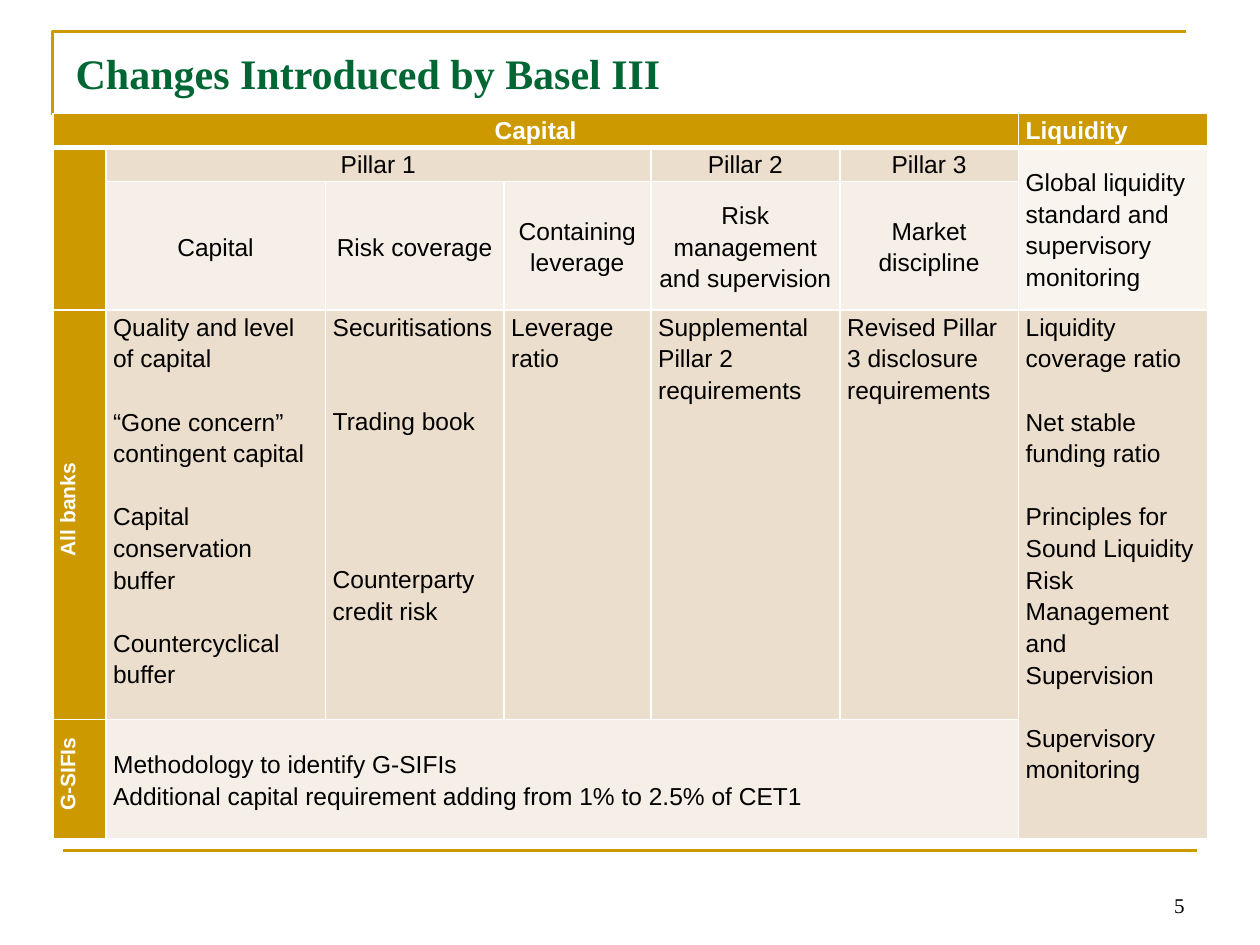
from lxml import etree
from pptx import Presentation
from pptx.dml.color import RGBColor
from pptx.enum.shapes import MSO_CONNECTOR
from pptx.enum.text import MSO_ANCHOR, PP_ALIGN
from pptx.oxml.ns import qn
from pptx.util import Pt

GOLD = RGBColor(0xCC, 0x99, 0x00)
GREEN = RGBColor(0x00, 0x66, 0x33)
SAND = RGBColor(0xEC, 0xDE, 0xCC)
CREAM = RGBColor(0xF6, 0xEF, 0xE7)
IVORY = RGBColor(0xF9, 0xF4, 0xEE)
WHITE = RGBColor(0xFF, 0xFF, 0xFF)
BLACK = RGBColor(0x00, 0x00, 0x00)
SANS, SERIF = "Arial", "Times New Roman"
LEFT, CENTER, RIGHT = PP_ALIGN.LEFT, PP_ALIGN.CENTER, PP_ALIGN.RIGHT
TOP, MIDDLE, BOTTOM = MSO_ANCHOR.TOP, MSO_ANCHOR.MIDDLE, MSO_ANCHOR.BOTTOM
STRAIGHT = MSO_CONNECTOR.STRAIGHT

TITLE_ONLY = 5
LINE_GAP = 18  # height of one table line, the unit of paragraph gaps
COLUMN_WIDTHS = (30.25, 125.5, 102, 84, 108, 102, 108.25)
ROW_HEIGHTS = (19.4, 19.4, 73.5, 234, 68.4)

PILLARS = ((1, 3, "Pillar 1"), (4, 4, "Pillar 2"), (5, 5, "Pillar 3"))
THEMES = ("Capital", "Risk coverage", "Containing leverage",
          "Risk management and supervision", "Market discipline")
# Each measure has its text and the number of lines left free above it.
ALL_BANKS = (
    (("Quality and level of capital", 0),
     ("“Gone concern” contingent capital", 1),
     ("Capital conservation buffer", 1),
     ("Countercyclical buffer", 1)),
    (("Securitisations", 0), ("Trading book", 2),
     ("Counterparty credit risk", 4)),
    (("Leverage ratio", 0),),
    (("Supplemental Pillar 2 requirements", 0),),
    (("Revised Pillar 3 disclosure requirements", 0),),
)
LIQUIDITY = (
    ("Liquidity coverage ratio", 0),
    ("Net stable funding ratio", 1),
    ("Principles for Sound Liquidity Risk Management and Supervision", 1),
    ("Supervisory monitoring", 1),
)
GSIFIS = (("Methodology to identify G-SIFIs", 0),
          ("Additional capital requirement adding from 1% to 2.5% of CET1", 0))


def set_font(paragraph, name, size, color, bold=False):
    font = paragraph.font
    font.name, font.size, font.bold = name, Pt(size), bold
    font.color.rgb = color


def add_frame(slide, left, top, width, height):
    """Draw the open corner around the title."""
    builder = slide.shapes.build_freeform(left, top + height, scale=Pt(1))
    builder.add_line_segments([(left, top), (left + width, top)], close=False)
    corner = builder.convert_to_shape()
    corner.shadow.inherit = False
    corner.fill.background()
    corner.line.color.rgb = GOLD
    corner.line.width = Pt(1.5)


def add_footer_rule(slide, left, top, width):
    rule = slide.shapes.add_connector(
        STRAIGHT, Pt(left), Pt(top), Pt(left + width), Pt(top))
    rule.line.color.rgb = GOLD
    rule.line.width = Pt(1.5)
    etree.SubElement(rule._element.spPr, qn("a:effectLst"))


def add_title(slide, left, top, width, height):
    title = slide.shapes.title
    title.left, title.top = Pt(left), Pt(top)
    title.width, title.height = Pt(width), Pt(height)
    frame = title.text_frame
    frame.text = "Changes Introduced by Basel III"
    frame.vertical_anchor = MIDDLE
    frame.margin_bottom = Pt(7.6)
    paragraph = frame.paragraphs[0]
    paragraph.alignment = LEFT
    set_font(paragraph, SERIF, 24, GREEN, bold=True)


def add_page_number(slide, left, top, width, height):
    box = slide.shapes.add_textbox(Pt(left), Pt(top), Pt(width), Pt(height))
    frame = box.text_frame
    frame.word_wrap = True
    frame.vertical_anchor = BOTTOM
    paragraph = frame.paragraphs[0]
    paragraph.text = "5"
    paragraph.alignment = RIGHT
    set_font(paragraph, SERIF, 12, BLACK)


def set_borders(cell, top=1, bottom=1):
    """Give the cell white borders, listed in the order the schema asks for."""
    properties = cell._tc.get_or_add_tcPr()
    widths = {"lnL": 1, "lnR": 1, "lnT": top, "lnB": bottom}
    for index, (side, width) in enumerate(widths.items()):
        line = etree.Element(qn(f"a:{side}"), w=str(Pt(width)))
        fill = etree.SubElement(line, qn("a:solidFill"))
        etree.SubElement(fill, qn("a:srgbClr"), val=str(WHITE))
        properties.insert(index, line)


def fill_cell(cell, measures, fill, align=LEFT, anchor=TOP,
              color=BLACK, size=14, bold=False):
    cell.fill.solid()
    cell.fill.fore_color.rgb = fill
    cell.vertical_anchor = anchor
    frame = cell.text_frame
    frame.text = "\n".join(text for text, _ in measures)
    for paragraph, (_, free_lines) in zip(frame.paragraphs, measures):
        paragraph.alignment = align
        paragraph.line_spacing = 1.15
        paragraph.space_before = Pt(free_lines * LINE_GAP)
        set_font(paragraph, SANS, size, color, bold)


def fill_side_label(cell, label):
    """Fill a row label that reads upwards."""
    fill_cell(cell, [(label, 0)], GOLD, CENTER, color=WHITE, size=12, bold=True)
    cell._tc.get_or_add_tcPr().set("vert", "vert270")
    paragraph = cell.text_frame.paragraphs[0]
    paragraph._p.get_or_add_pPr().set("marL", str(Pt(5.76)))


def add_changes_table(slide, left, top, width, height):
    table = slide.shapes.add_table(
        len(ROW_HEIGHTS), len(COLUMN_WIDTHS),
        Pt(left), Pt(top), Pt(width), Pt(height)).table
    table.horz_banding = False
    for column, column_width in zip(table.columns, COLUMN_WIDTHS):
        column.width = Pt(column_width)
    for row, row_height in zip(table.rows, ROW_HEIGHTS):
        row.height = Pt(row_height)
    for row_index, row in enumerate(table.rows):
        for cell in row.cells:
            cell.margin_left = cell.margin_right = Pt(4.2)
            cell.margin_top = cell.margin_bottom = 0
            set_borders(cell, top=3 if row_index == 1 else 1,
                        bottom=3 if row_index == 0 else 1)

    for first, last in (((0, 0), (0, 5)), ((1, 0), (2, 0)), ((1, 1), (1, 3)),
                        ((1, 6), (2, 6)), ((3, 6), (4, 6)), ((4, 1), (4, 5))):
        table.cell(*first).merge(table.cell(*last))

    for column, heading, align in ((0, "Capital", CENTER), (6, "Liquidity", LEFT)):
        fill_cell(table.cell(0, column), [(heading, 0)], GOLD, align,
                  color=WHITE, bold=True)
    fill_cell(table.cell(1, 0), [], GOLD)
    for column, _, pillar in PILLARS:
        fill_cell(table.cell(1, column), [(pillar, 0)], SAND, CENTER)
    for column, (theme, measures) in enumerate(zip(THEMES, ALL_BANKS), start=1):
        fill_cell(table.cell(2, column), [(theme, 0)], CREAM, CENTER, MIDDLE)
        fill_cell(table.cell(3, column), measures, SAND)
    fill_cell(table.cell(1, 6),
              [("Global liquidity standard and supervisory monitoring", 0)],
              IVORY, anchor=MIDDLE)
    fill_cell(table.cell(3, 6), LIQUIDITY, SAND)
    fill_cell(table.cell(4, 1), GSIFIS, CREAM, anchor=MIDDLE)
    fill_side_label(table.cell(3, 0), "All banks")
    fill_side_label(table.cell(4, 0), "G-SIFIs")


def main():
    presentation = Presentation()
    presentation.slide_width, presentation.slide_height = Pt(720), Pt(540)
    slide = presentation.slides.add_slide(
        presentation.slide_layouts[TITLE_ONLY])
    add_frame(slide, 30, 18, 648, 48)
    add_footer_rule(slide, 36, 486, 648)
    add_title(slide, 36, 21.6, 648, 44)
    add_changes_table(slide, 30.2, 64.8, sum(COLUMN_WIDTHS), sum(ROW_HEIGHTS))
    add_page_number(slide, 516, 492, 168, 36)
    presentation.save("out.pptx")


if __name__ == "__main__":
    main()
